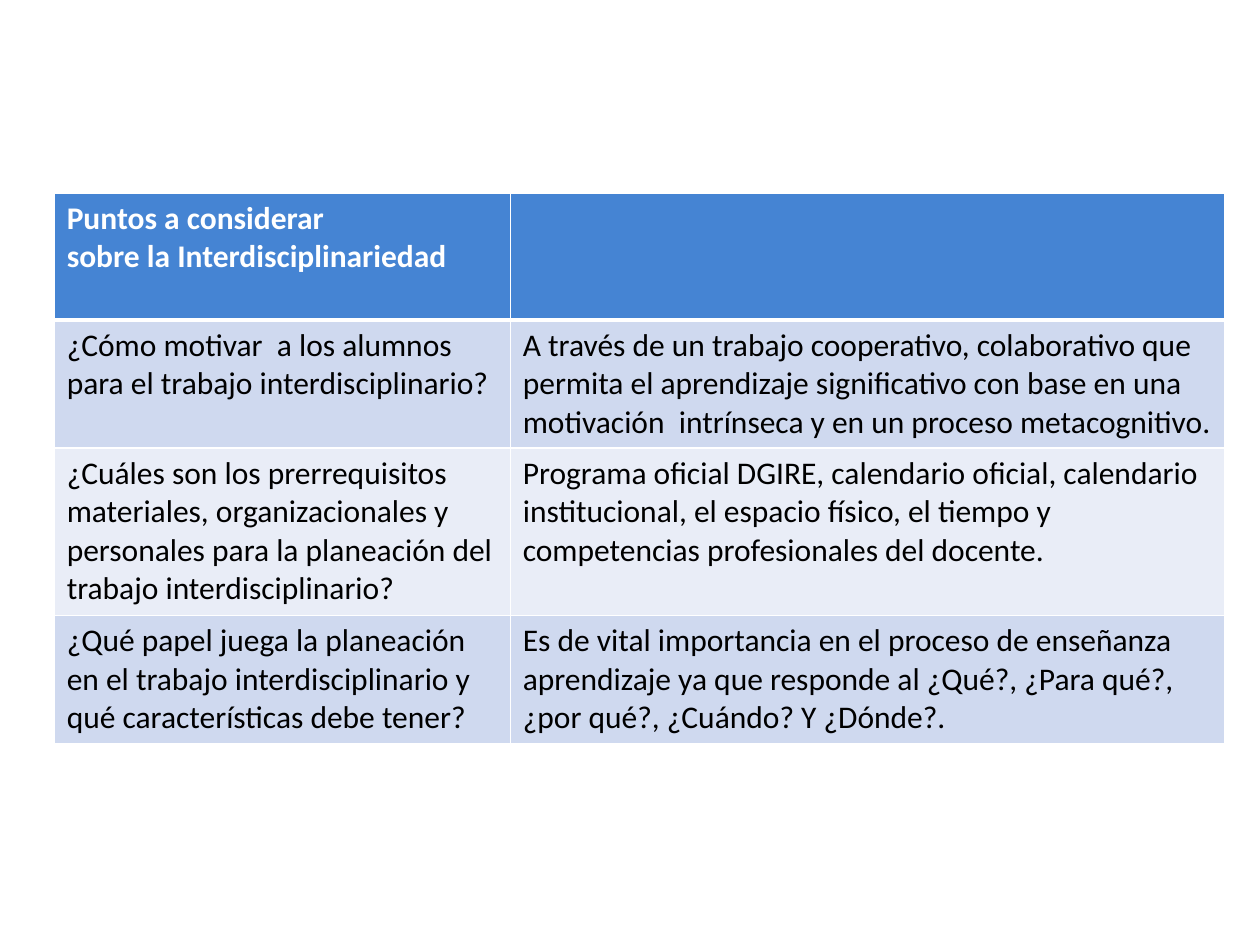
from lxml.etree import SubElement
from pptx import Presentation
from pptx.dml.color import RGBColor
from pptx.oxml.ns import qn
from pptx.util import Inches, Pt

COLORS = {
    "header": "4584D3",
    "band_dark": "CFD9EF",
    "band_light": "E9EDF7",
    "white": "FFFFFF",
    "black": "000000",
}
FONT = "Calibri"
COLUMN_WIDTHS = [3.62, 5.67]
ROW_HEIGHTS = [1.01, 1.01, 1.33, 1.01]
ROWS = [
    ("Puntos a considerar\nsobre la Interdisciplinariedad", ""),
    (
        "¿Cómo motivar  a los alumnos para el trabajo interdisciplinario?",
        "A través de un trabajo cooperativo, colaborativo que permita el aprendizaje "
        "significativo con base en una motivación  intrínseca y en un proceso metacognitivo.",
    ),
    (
        "¿Cuáles son los prerrequisitos materiales, organizacionales y personales "
        "para la planeación del trabajo interdisciplinario?",
        "Programa oficial DGIRE, calendario oficial, calendario institucional, "
        "el espacio físico, el tiempo y competencias profesionales del docente.",
    ),
    (
        "¿Qué papel juega la planeación en el trabajo interdisciplinario "
        "y qué características debe tener?",
        "Es de vital importancia en el proceso de enseñanza aprendizaje ya que "
        "responde al ¿Qué?, ¿Para qué?, ¿por qué?, ¿Cuándo? Y ¿Dónde?.",
    ),
]


def set_borders(cell, widths):
    properties = cell._tc.get_or_add_tcPr()
    for side, width in widths.items():
        line = SubElement(properties, qn(f"a:ln{side}"), w=str(Pt(width)))
        fill = SubElement(line, qn("a:solidFill"))
        SubElement(fill, qn("a:srgbClr"), val=COLORS["white"])


def fill_cell(cell, text, row):
    is_header = row == 0
    set_borders(cell, {"L": 1, "R": 1, "T": 3 if row == 1 else 1, "B": 3 if is_header else 1})
    band = "header" if is_header else "band_dark" if row % 2 else "band_light"
    cell.fill.solid()
    cell.fill.fore_color.rgb = RGBColor.from_string(COLORS[band])
    cell.text_frame.text = text
    for paragraph in cell.text_frame.paragraphs:
        paragraph.font.size = Pt(18)
        for run in paragraph.runs:
            run.font.name = FONT
            run.font.size = Pt(18)
            run.font.bold = is_header
            run.font.color.rgb = RGBColor.from_string(COLORS["white" if is_header else "black"])


def add_considerations_table(slide):
    frame = slide.shapes.add_table(
        len(ROWS), len(COLUMN_WIDTHS), Inches(0.43), Inches(1.53),
        Inches(sum(COLUMN_WIDTHS)), Inches(sum(ROW_HEIGHTS)),
    )
    table = frame.table
    for column, width in zip(table.columns, COLUMN_WIDTHS):
        column.width = Inches(width)
    for row, (height, texts) in enumerate(zip(ROW_HEIGHTS, ROWS)):
        table.rows[row].height = Inches(height)
        for column, text in enumerate(texts):
            fill_cell(table.cell(row, column), text, row)


def main():
    presentation = Presentation()
    presentation.slide_width = Inches(10)
    presentation.slide_height = Inches(7.5)
    slide = presentation.slides.add_slide(presentation.slide_layouts[6])
    add_considerations_table(slide)
    presentation.save("out.pptx")


if __name__ == "__main__":
    main()
